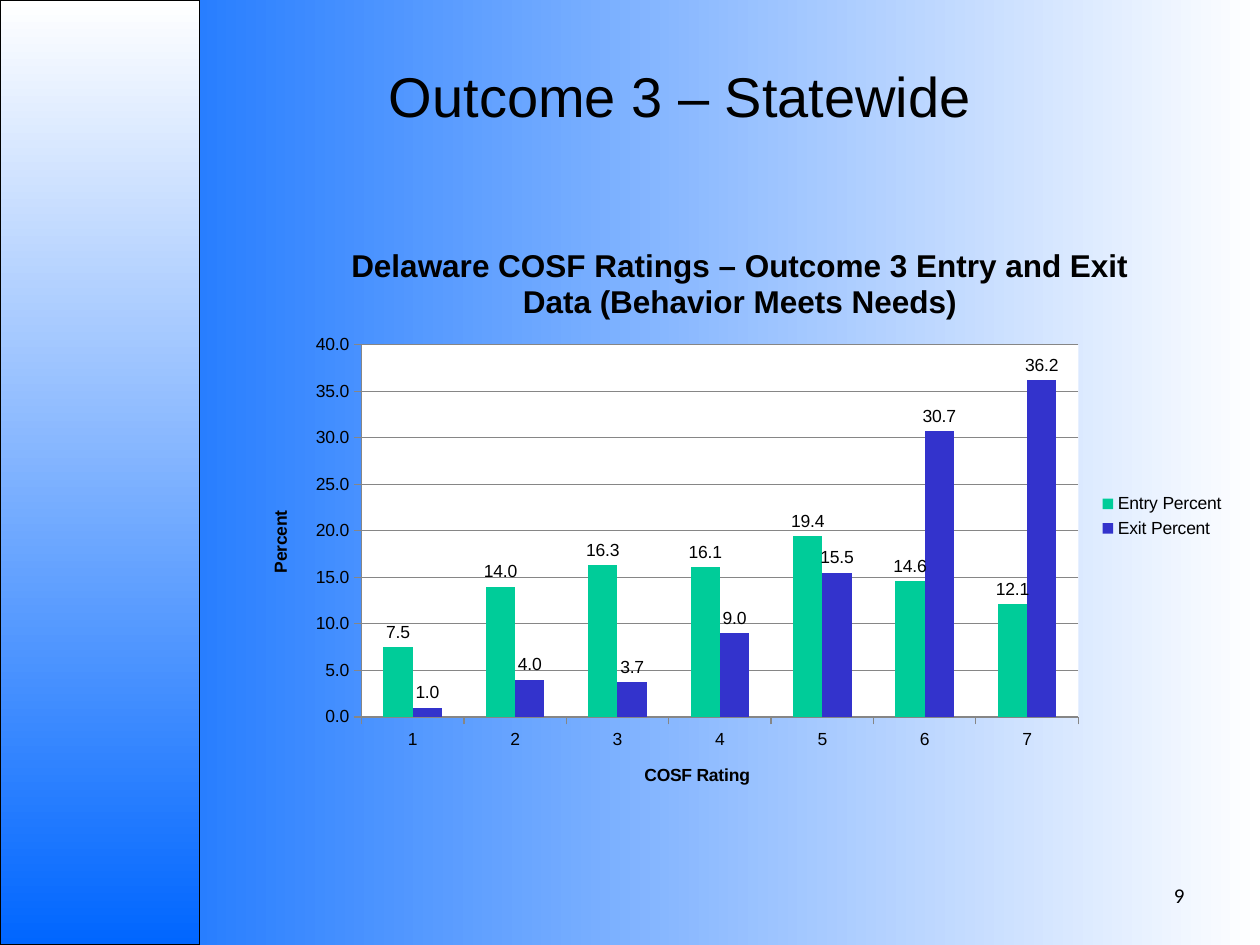
from dataclasses import dataclass

from lxml import etree
from pptx import Presentation
from pptx.chart.data import CategoryChartData
from pptx.dml.color import RGBColor
from pptx.enum.chart import XL_CHART_TYPE, XL_LABEL_POSITION, XL_LEGEND_POSITION, XL_TICK_MARK
from pptx.enum.shapes import MSO_SHAPE
from pptx.enum.text import MSO_ANCHOR, MSO_AUTO_SIZE, PP_ALIGN
from pptx.oxml import parse_xml
from pptx.oxml.ns import qn
from pptx.util import Cm, Pt

COLUMNS = XL_CHART_TYPE.COLUMN_CLUSTERED
LABEL_OUT = XL_LABEL_POSITION.OUTSIDE_END
LEGEND_RIGHT = XL_LEGEND_POSITION.RIGHT
TICK_OUT = XL_TICK_MARK.OUTSIDE
RECT = MSO_SHAPE.RECTANGLE
BOTTOM = MSO_ANCHOR.BOTTOM
NO_FIT = MSO_AUTO_SIZE.NONE
CENTER, RIGHT = PP_ALIGN.CENTER, PP_ALIGN.RIGHT

BLACK, WHITE, BLUE, GRAY = "000000", "FFFFFF", "0066FF", "868686"
NS_C = "http://schemas.openxmlformats.org/drawingml/2006/chart"
NS_A = "http://schemas.openxmlformats.org/drawingml/2006/main"


@dataclass
class Box:
    left: float
    top: float
    width: float
    height: float

    def emu(self) -> list:
        return [Cm(v) for v in (self.left, self.top, self.width, self.height)]


@dataclass
class RatingSeries:
    name: str
    color: str
    values: tuple


SERIES = [
    RatingSeries("Entry Percent", "00CC99", (7.5, 14.0, 16.3, 16.1, 19.4, 14.6, 12.1)),
    RatingSeries("Exit Percent", "3333CC", (1.0, 4.0, 3.7, 9.0, 15.5, 30.7, 36.2)),
]


def rgb(value: str) -> RGBColor:
    return RGBColor.from_string(value)


def set_font(font, name: str, size: float, bold: bool = False) -> None:
    for key, value in {"name": name, "size": Pt(size), "bold": bold}.items():
        setattr(font, key, value)
    font.color.rgb = rgb(BLACK)


def set_gradient(fill, angle: float, *colors: str) -> None:
    fill.gradient()
    fill.gradient_angle = angle
    for stop, color, pos in zip(fill.gradient_stops, colors, (0, 1)):
        stop.color.rgb = rgb(color)
        stop.position = pos


def write_text(sp, box: Box, text: str, font: str, size: float, align) -> None:
    sp.left, sp.top, sp.width, sp.height = box.emu()
    tf = sp.text_frame
    fmt = {"word_wrap": True, "auto_size": NO_FIT, "vertical_anchor": BOTTOM}
    for key, value in fmt.items():
        setattr(tf, key, value)
    p = tf.paragraphs[0]
    p.alignment = align
    r = p.add_run()
    r.text = text
    set_font(r.font, font, size)


def add_side_band(slide) -> None:
    sp = slide.shapes.add_shape(RECT, *Box(0, 0, 4.02, 19.05).emu())
    sp.shadow.inherit = False
    set_gradient(sp.fill, 270, WHITE, BLUE)
    sp.line.color.rgb = rgb(BLACK)
    sp.line.width = Pt(0.75)
    slide.shapes._spTree.insert(2, sp._element)


def set_title(owner, text: str, size: float) -> None:
    tf = owner.text_frame
    tf.text = text
    set_font(tf.paragraphs[0].runs[0].font, "Arial", size, True)


def format_axis(axis, title: str) -> None:
    set_title(axis.axis_title, title, 10)
    axis.major_tick_mark = TICK_OUT
    axis.format.line.color.rgb = rgb(GRAY)
    set_font(axis.tick_labels.font, "Arial", 10)


def format_plot_area(chart) -> None:
    area = chart._chartSpace.chart.plotArea
    for old in area.findall(qn("c:layout")):
        area.remove(old)
    layout = etree.Element(qn("c:layout"))
    manual = etree.SubElement(layout, qn("c:manualLayout"))
    parts = {"layoutTarget": "inner", "xMode": "edge", "yMode": "edge",
             "x": "0.12", "y": "0.21", "w": "0.72", "h": "0.63"}
    for tag, value in parts.items():
        etree.SubElement(manual, qn(f"c:{tag}")).set("val", value)
    area.insert(0, layout)
    area.append(parse_xml(
        f'<c:spPr xmlns:c="{NS_C}" xmlns:a="{NS_A}"><a:solidFill>'
        f'<a:srgbClr val="{WHITE}"/></a:solidFill><a:ln><a:noFill/></a:ln></c:spPr>'))


def add_rating_chart(slide) -> None:
    data = CategoryChartData(number_format="0.0")
    data.categories = [str(n) for n in range(1, 8)]
    for s in SERIES:
        data.add_series(s.name, s.values)
    box = Box(4.88, 4.45, 20.07, 11.91)
    chart = slide.shapes.add_chart(COLUMNS, *box.emu(), data).chart
    set_font(chart.font, "Arial", 10)
    set_title(chart.chart_title,
              "Delaware COSF Ratings – Outcome 3 Entry and Exit Data (Behavior Meets Needs)", 18)
    chart.chart_title.include_in_layout = False
    chart.has_legend = True
    chart.legend.position = LEGEND_RIGHT
    chart.legend.include_in_layout = False
    set_font(chart.legend.font, "Arial", 10)

    format_axis(chart.category_axis, "COSF Rating")
    axis = chart.value_axis
    format_axis(axis, "Percent")
    for key, value in {"minimum_scale": 0, "maximum_scale": 40, "major_unit": 5}.items():
        setattr(axis, key, value)
    axis.major_gridlines.format.line.color.rgb = rgb(GRAY)
    axis.tick_labels.number_format = "0.0"
    axis.tick_labels.number_format_is_linked = False

    plot = chart.plots[0]
    for key, value in {"gap_width": 150, "overlap": 0, "vary_by_categories": False}.items():
        setattr(plot, key, value)
    for series, spec_row in zip(plot.series, SERIES):
        series.format.fill.solid()
        series.format.fill.fore_color.rgb = rgb(spec_row.color)
        labels = series.data_labels
        fmt = {"show_value": True, "number_format": "0.0",
               "number_format_is_linked": False, "position": LABEL_OUT}
        for key, value in fmt.items():
            setattr(labels, key, value)
        set_font(labels.font, "Arial", 10)
    format_plot_area(chart)


def main() -> None:
    prs = Presentation()
    prs.slide_width, prs.slide_height = Cm(25.4), Cm(19.05)
    slide = prs.slides.add_slide(prs.slide_layouts[5])
    set_gradient(slide.background.fill, 0, BLUE, WHITE)
    add_side_band(slide)

    title = slide.shapes.title
    write_text(title, Box(3.61, 0.43, 20.52, 2.31), "Outcome 3 – Statewide ", "Arial", 32, CENTER)
    tf = title.text_frame
    for side in ("left", "top", "right", "bottom"):
        setattr(tf, f"margin_{side}", Cm(0.13))
    tf.paragraphs[0].line_spacing = 0.85

    box = Box(20.32, 17.15, 3.81, 1.27)
    number = slide.shapes.add_textbox(*box.emu())
    write_text(number, box, "9", "Calibri", 12, RIGHT)
    add_rating_chart(slide)
    prs.save("out.pptx")


if __name__ == "__main__":
    main()
